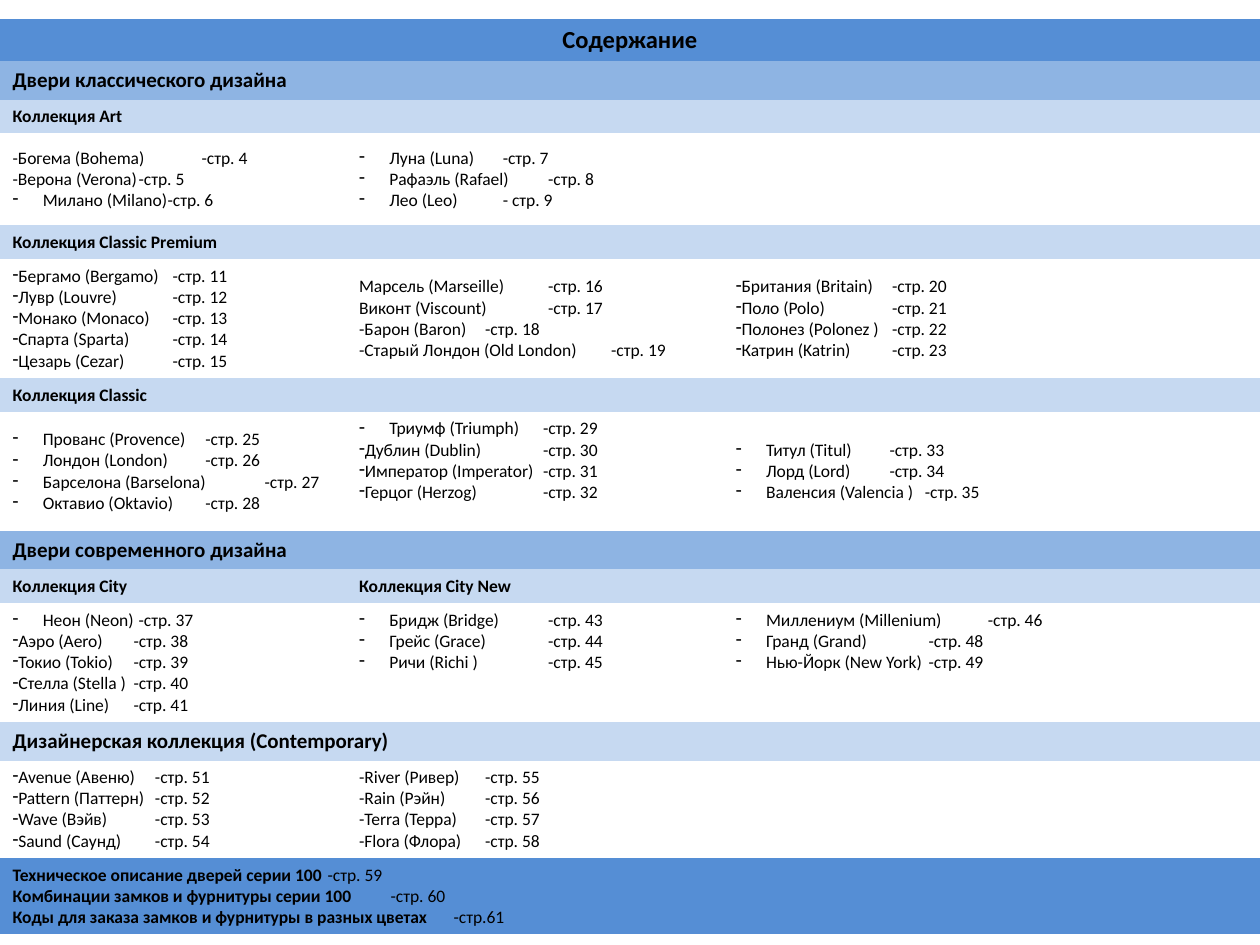
from lxml import etree
from pptx import Presentation
from pptx import util as u
from pptx.dml.color import RGBColor
from pptx.enum import text
from pptx.oxml.ns import qn

NO_STYLE = "{2D5ABB26-0587-4C30-8999-92F81FD0307C}"
DARK, MIDDLE, LIGHT, WHITE = "558ED5", "8EB4E3", "C6D9F1", "FFFFFF"
COLUMN_WIDTHS = [2.75, 2.99, 4.26]
INDENT = 0.24
LINE_HEIGHT = 0.17
MARGIN = 0.05


def color(value):
    return RGBColor.from_string(value)


def band(height, fill, *headings, size=10, align=text.PP_ALIGN.LEFT):
    return {"height": height, "fill": fill, "headings": headings,
            "format": {"size": u.Pt(size), "bold": True}, "align": align}


def entries(height, *lists, fill=WHITE):
    return {"height": height, "fill": fill, "lists": lists}


def listing(tab, *lines, space_below=0, bold=False, anchor=text.MSO_ANCHOR.MIDDLE):
    """Lines read 'name|page'; '- ' starts an indented bullet, '•' a flush one.

    The tab is counted from the indent, space_below in lines of text.
    """
    return {"tab": tab, "lines": lines, "space_below": space_below,
            "bold": bold, "anchor": anchor}


ROWS = [
    band(0.32, DARK, "Содержание", size=14, align=text.PP_ALIGN.CENTER),
    band(0.28, MIDDLE, "Двери классического дизайна", size=12),
    band(0.25, LIGHT, "Коллекция Art"),
    entries(0.73,
            listing(1.23, "-Богема (Bohema)|4", "-Верона (Verona)|5", "- Милано (Milano)|6"),
            listing(1.14, "- Луна (Luna)|7", "- Рафаэль (Rafael)|8", "- Лео (Leo)|- стр. 9")),
    band(0.25, LIGHT, "Коллекция Classic Premium"),
    entries(0.73,
            listing(1.27, "•Бергамо (Bergamo)|11", "•Лувр (Louvre)|12", "•Монако (Monaco)|13",
                    "•Спарта (Sparta)|14", "•Цезарь (Cezar)|15"),
            listing(1.87, "Марсель (Marseille)|16", "Виконт (Viscount)|17",
                    "-Барон (Baron)|18", "-Старый Лондон (Old London)|19"),
            listing(1.24, "•Британия (Britain)|20", "•Поло (Polo)|21",
                    "•Полонез (Polonez )|22", "•Катрин (Katrin)|23")),
    band(0.25, LIGHT, "Коллекция Classic"),
    entries(0.89,
            listing(1.53, "- Прованс (Provence)|25", "- Лондон (London)|26",
                    "- Барселона (Barselona)|27", "- Октавио (Oktavio)|28"),
            listing(1.46, "- Триумф (Triumph)|29", "•Дублин (Dublin)|30",
                    "•Император (Imperator)|31", "•Герцог (Herzog)|32", space_below=1),
            listing(1.22, "- Титул (Titul)|33", "- Лорд (Lord)|34", "- Валенсия (Valencia )|35")),
    band(0.28, MIDDLE, "Двери современного дизайна", size=12),
    band(0.25, LIGHT, "Коллекция City", "Коллекция City New"),
    entries(0.89,
            listing(0.96, "- Неон (Neon)|37", "•Аэро (Aero)|38", "•Токио (Tokio)|39",
                    "•Стелла (Stella )|40", "•Линия (Line)|41"),
            listing(1.5, "- Бридж (Bridge)|43", "- Грейс (Grace)|44", "- Ричи (Richi )|45",
                    space_below=2),
            listing(1.53, "- Миллениум (Millenium)|46", "- Гранд (Grand)|48",
                    "- Нью-Йорк (New York)|49", space_below=2)),
    band(0.28, LIGHT, "Дизайнерская коллекция (Contemporary)", size=12),
    entries(0.73,
            listing(1.13, "•Avenue (Авеню)|51", "•Pattern (Паттерн)|52",
                    "•Wave (Вэйв)|53", "•Saund (Саунд)|54"),
            listing(1, "-River (Ривер)|55", "-Rain (Рэйн)|56",
                    "-Terra (Терра)|57", "-Flora (Флора)|58", anchor=text.MSO_ANCHOR.TOP)),
    entries(0.49,
            listing(3.34, "Техническое описание дверей серии 100|59",
                    "Комбинации замков и фурнитуры серии 100|60",
                    "Коды для заказа замков и фурнитуры в разных цветах|-стр.61", bold=True),
            fill=DARK),
]


class ContentsSlide:
    font = {"name": "Calibri", "size": u.Pt(10), "bold": False}

    def __init__(self, presentation):
        self.slide = presentation.slides.add_slide(presentation.slide_layouts[6])

    def add_run(self, paragraph, words, **changes):
        run = paragraph.add_run()
        run.text = words
        for name, value in {**self.font, **changes}.items():
            setattr(run.font, name, value)
        run.font.color.rgb = color("000000")

    def add_line(self, paragraph, line, tab, bold):
        name, page = line.split("|")
        indent = INDENT if name.startswith("- ") else 0
        properties = paragraph._p.get_or_add_pPr()
        properties.set("marL", str(u.Inches(indent)))
        properties.set("indent", str(-u.Inches(indent)))
        if indent or name.startswith("•"):
            name = name.lstrip("-• ")
            etree.SubElement(properties, qn("a:buChar")).set("char", "-")
        stop = etree.SubElement(etree.SubElement(properties, qn("a:tabLst")), qn("a:tab"))
        stop.set("pos", str(u.Inches(tab)))
        stop.set("algn", "l")
        self.add_run(paragraph, name, bold=bold)
        self.add_run(paragraph, "\t" + (f"-стр. {page}" if page.isdigit() else page))

    def add_list(self, cell, content):
        cell.vertical_anchor = content["anchor"]
        cell.margin_bottom = u.Inches(MARGIN + content["space_below"] * LINE_HEIGHT)
        for index, line in enumerate(content["lines"]):
            frame = cell.text_frame
            paragraph = frame.add_paragraph() if index else frame.paragraphs[0]
            self.add_line(paragraph, line, content["tab"], content["bold"])

    def add_heading(self, cell, words, row):
        cell.vertical_anchor = text.MSO_ANCHOR.MIDDLE
        paragraph = cell.text_frame.paragraphs[0]
        paragraph.alignment = row["align"]
        self.add_run(paragraph, words, **row["format"])

    def add_table(self, rows, left, top):
        height = sum(row["height"] for row in rows)
        frame = self.slide.shapes.add_table(
            len(rows), len(COLUMN_WIDTHS), u.Inches(left), u.Inches(top),
            u.Inches(sum(COLUMN_WIDTHS)), u.Inches(height))
        table = frame.table
        table.first_row = table.horz_banding = False
        next(frame.element.iter(qn("a:tableStyleId"))).text = NO_STYLE
        for column, width in zip(table.columns, COLUMN_WIDTHS):
            column.width = u.Inches(width)
        for index, row in enumerate(rows):
            table.rows[index].height = u.Inches(row["height"])
            cells = [table.cell(index, column) for column in range(len(COLUMN_WIDTHS))]
            for cell in cells:
                cell.fill.solid()
                cell.fill.fore_color.rgb = color(row["fill"])
            contents = row.get("headings") or row["lists"]
            if len(contents) < len(cells):
                cells[len(contents) - 1].merge(cells[-1])
            for cell, content in zip(cells, contents):
                if "headings" in row:
                    self.add_heading(cell, content, row)
                else:
                    self.add_list(cell, content)


def main():
    presentation = Presentation()
    presentation.slide_width = u.Inches(10)
    presentation.slide_height = u.Inches(7.5)
    ContentsSlide(presentation).add_table(ROWS, left=0, top=0.15)
    presentation.save("out.pptx")


if __name__ == "__main__":
    main()
